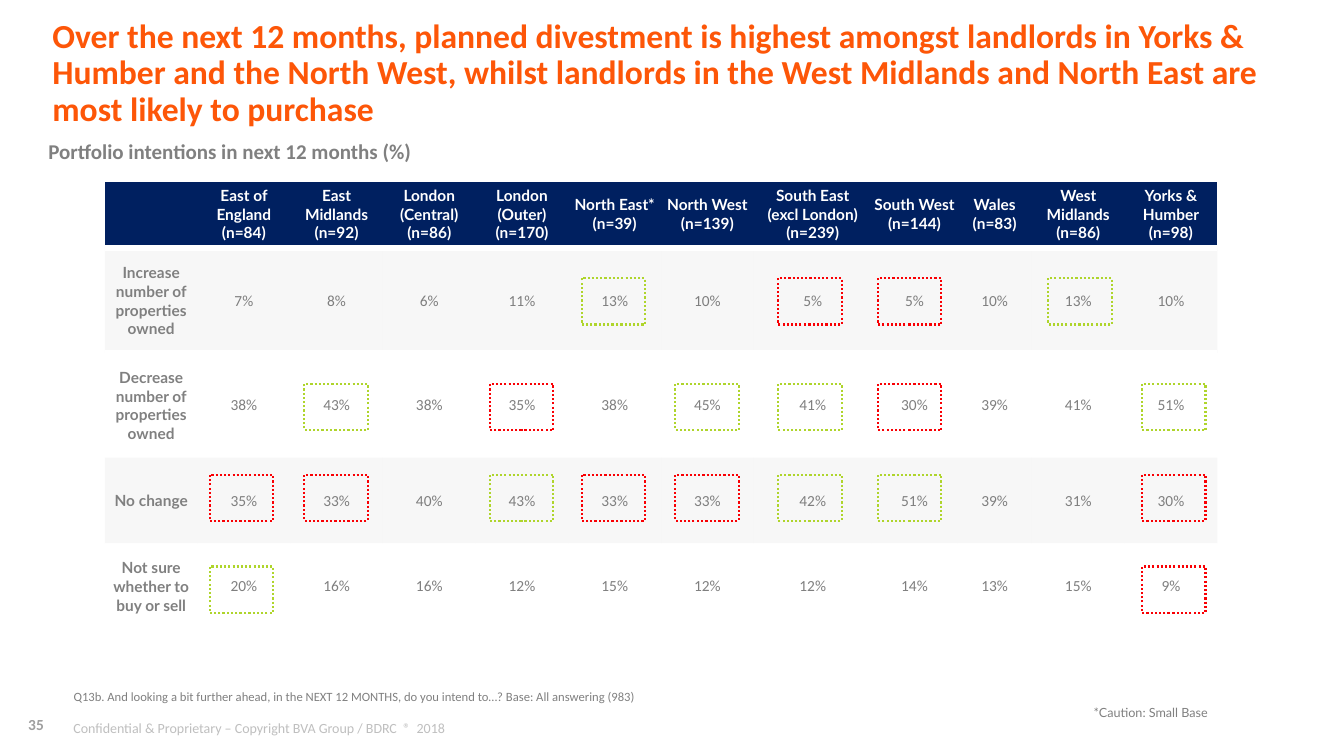
import pptx
import pptx.util
import pptx.dml.color
import pptx.enum.dml
import pptx.enum.shapes
import pptx.enum.text
import lxml.etree

RGBColor = pptx.dml.color.RGBColor
Pt = pptx.util.Pt
ALIGN = pptx.enum.text.PP_ALIGN
MIDDLE = pptx.enum.text.MSO_ANCHOR.MIDDLE
A = "{http://schemas.openxmlformats.org/drawingml/2006/main}"

ORANGE = RGBColor(0xFD, 0x56, 0x08)
NAVY = RGBColor(0x00, 0x20, 0x60)
WHITE = RGBColor(0xFF, 0xFF, 0xFF)
DARK = RGBColor(0x40, 0x40, 0x40)
GREY = RGBColor(0x80, 0x80, 0x80)
ASH = RGBColor(0x7F, 0x7F, 0x7F)
PALE = RGBColor(0xBF, 0xBF, 0xBF)
BAND = RGBColor(0xD9, 0xD9, 0xD9)
GREEN = RGBColor(0xAF, 0xD5, 0x2C)
RED = RGBColor(0xF9, 0x00, 0x04)

# Grid of 133.3 columns by 75 rows, a tenth of an inch each
UNIT = pptx.util.Inches(0.1)


def grid(*cells):
    return [round(n * UNIT) for n in cells]


def write(frame, text, size, face, color, bold=False, align=ALIGN.LEFT, space=1.0):
    """Fill a text frame: \\n parts paragraphs, \\v breaks a line."""
    for i, part in enumerate(text.split("\n")):
        para = frame.paragraphs[0] if i == 0 else frame.add_paragraph()
        para.alignment = align
        para.line_spacing = space
        for j, line in enumerate(part.split("\v")):
            if j:
                para.add_line_break()
            run = para.add_run()
            run.text = line
            run.font.size = Pt(size)
            run.font.name = face
            run.font.bold = bold
            run.font.color.rgb = color


deck = pptx.Presentation()
deck.slide_width, deck.slide_height = grid(133.33, 75)
slide = deck.slides.add_slide(deck.slide_layouts[6])
shapes = slide.shapes

# Footer: page number and copyright line
box = shapes.add_textbox(*grid(1.5, 70.1, 4.1, 3.6))
page = box.text_frame
page.word_wrap = True
page.vertical_anchor = MIDDLE
page.margin_left, page.margin_right = grid(1.3, 0)
write(page, "35", 11, "Calibri", DARK, True)
tint = page.paragraphs[0].runs[0].font.fill._xPr.find(f".//{A}srgbClr")
lxml.etree.SubElement(tint, A + "alpha", val="50000")

box = shapes.add_textbox(*grid(6.3, 70.9, 113.3, 2.4))
box.text_frame.word_wrap = True
write(box.text_frame, "Confidential & Proprietary – Copyright BVA Group / BDRC  ®  2018",
      10, "Calibri", PALE)

# Title, subtitle and question
for place, text, size, color, bold in [
    ((5.2, 3.7, 123, 7.3),
     "Over the next 12 months, planned divestment is highest amongst landlords in "
     "Yorks & Humber and the North West, whilst landlords in the West Midlands and "
     "North East are most likely to purchase", 24, ORANGE, True),
    ((4.8, 13, 105.7, 4.3), "Portfolio intentions in next 12 months (%)", 15, GREY, True),
    ((7.3, 67.7, 103, 3),
     "Q13b. And looking a bit further ahead, in the NEXT 12 MONTHS, do you intend to…? "
     "Base: All answering (983)", 9, GREY, False),
]:
    frame = shapes.add_textbox(*grid(*place)).text_frame
    frame.word_wrap = True
    frame.vertical_anchor = MIDDLE
    frame.margin_left = frame.margin_right = frame.margin_top = frame.margin_bottom = 0
    write(frame, text, size, "Calibri", color, bold, space=0.9)

# Table data: + marks a high value, - a low one
heads = ["", "East of England\n(n=84)", "East Midlands\n(n=92)", "London (Central)\n(n=86)",
         "London (Outer)\n(n=170)", "North East*\n(n=39)", "North West\n(n=139)",
         "South East\v(excl London)\n(n=239)", "South West\n(n=144)", "Wales\n(n=83)",
         "West Midlands\n(n=86)", "Yorks &\nHumber\n(n=98)"]
rows = [
    ("Increase number of properties owned",
     "7% 8% 6% 11% 13%+ 10% 5%- 5%- 10% 13%+ 10%"),
    ("Decrease number of properties owned",
     "38% 43%+ 38% 35%- 38% 45%+ 41%+ 30%- 39% 41% 51%+"),
    ("No change",
     "35%- 33%- 40% 43%+ 33%- 33%- 42%+ 51%+ 39% 31% 30%-"),
    ("Not sure whether to buy or sell",
     "20%+ 16% 16% 12% 15% 12% 12% 14% 13% 15% 9%-"),
]
lines = [heads] + [[name] + marks.split() for name, marks in rows]

# Table frame, with no built-in style
table = shapes.add_table(len(lines), len(heads), *grid(10.4, 17.8, 110.4, 44.6)).table
table.first_row = table.horz_banding = False
table._tbl.tblPr.find(A + "tableStyleId").text = "{2D5ABB26-0587-4C30-8999-92F81FD0307C}"
for col, width in zip(table.columns, grid(*[9.2] * 7, 11.7, 8.5, 7.4, 9.2, 9.2)):
    col.width = width
for row, height in zip(table.rows, grid(6.8, 10.4, 10.4, 8.5, 8.5)):
    row.height = height

# Table cells
EDGES = {0: ["lnT", "lnB"], 1: ["lnT"], 4: ["lnB"]}
for r, line in enumerate(lines):
    for c, text in enumerate(line):
        cell = table.cell(r, c)
        cell.vertical_anchor = MIDDLE
        cell.margin_left, cell.margin_right, cell.margin_top, cell.margin_bottom = grid(
            0.1, 0.1, 0.1, 0)
        props = cell._tc.get_or_add_tcPr()
        for edge in EDGES.get(r, []):
            rule = lxml.etree.SubElement(props, A + edge, w=str(Pt(4.5)))
            fill = lxml.etree.SubElement(rule, A + "solidFill")
            lxml.etree.SubElement(fill, A + "srgbClr", val=str(WHITE))
        if r == 0:
            cell.fill.solid()
            cell.fill.fore_color.rgb = NAVY
        elif r % 2:
            cell.fill.solid()
            cell.fill.fore_color.rgb = BAND
            tint = props.find(f"{A}solidFill/{A}srgbClr")
            lxml.etree.SubElement(tint, A + "alpha", val="20000")
        else:
            cell.fill.background()
        if r and c:
            write(cell.text_frame, text.rstrip("+-"), 11, "Calibri", ASH, False, ALIGN.CENTER)
        elif text:
            write(cell.text_frame, text, 11, "Lato", GREY if r else WHITE, True, ALIGN.CENTER)

# Small base note
box = shapes.add_textbox(*grid(100.3, 69.4, 20.5, 2.5))
box.text_frame.word_wrap = True
write(box.text_frame, "*Caution: Small Base", 9, "Lato", GREY, align=ALIGN.RIGHT)

# Dotted frames round the marked values
LEFTS = [0, 20.8, 30.2, 39.4, 48.6, 57.7, 67, 77.2, 87.1, 95.5, 104, 113.3]
TOPS = [0, 27.6, 38.1, 47.1, 56.2]
TONES = {"+": GREEN, "-": RED}
for r, line in enumerate(lines[1:], 1):
    for c, text in enumerate(line[1:], 1):
        if text[-1] in TONES:
            mark = shapes.add_shape(pptx.enum.shapes.MSO_SHAPE.RECTANGLE,
                                    *grid(LEFTS[c], TOPS[r], 6.3, 4.6))
            mark.shadow.inherit = False
            mark.fill.background()
            mark.line.color.rgb = TONES[text[-1]]
            mark.line.width = Pt(1.5)
            mark.line.dash_style = pptx.enum.dml.MSO_LINE.ROUND_DOT

deck.save("out.pptx")
